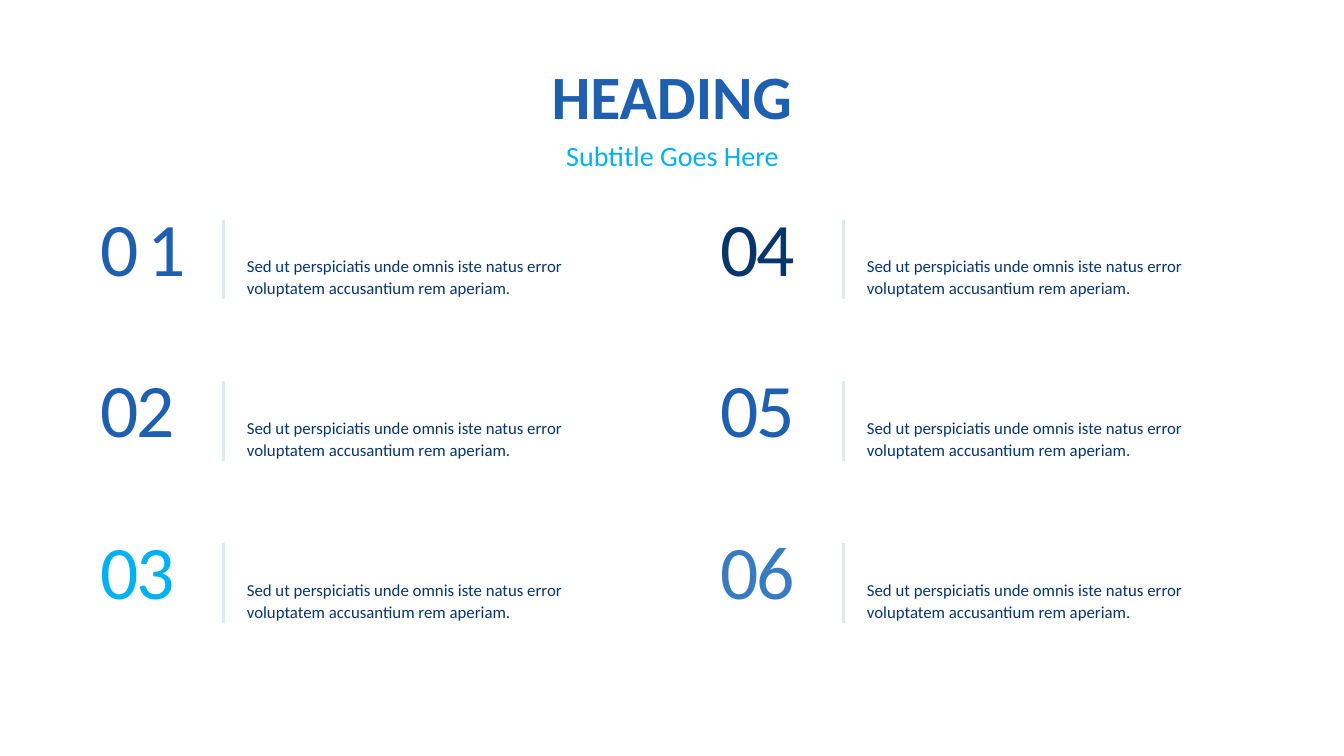
from dataclasses import dataclass

from lxml.etree import SubElement
from pptx import Presentation
from pptx.dml.color import RGBColor
from pptx.enum.shapes import MSO_CONNECTOR
from pptx.enum.text import MSO_AUTO_SIZE, PP_ALIGN
from pptx.oxml.ns import qn
from pptx.shapes.autoshape import Shape
from pptx.slide import Slide
from pptx.util import Inches, Pt


@dataclass(frozen=True)
class Theme:
    font: str = "Calibri"
    blue: str = "1E5FAF"
    navy: str = "08356B"
    cyan: str = "00B0F0"
    steel: str = "387CBF"
    rule: str = "E1E9EA"
    heading: float = 44
    subtitle: float = 20
    number: float = 54
    body: float = 12
    rule_width: float = 2


@dataclass(frozen=True)
class Item:
    number: str
    color: str
    width: float
    spacing: float = -1.5


THEME = Theme()
BODY = "Sed ut perspiciatis unde omnis iste natus error voluptatem accusantium rem aperiam."
ITEMS = [
    Item("01", THEME.blue, 1.19, spacing=6),
    Item("02", THEME.blue, 1.13),
    Item("03", THEME.cyan, 1.09),
    Item("04", THEME.navy, 1.14),
    Item("05", THEME.blue, 1.12),
    Item("06", THEME.steel, 1.15),
]
ROWS = 3
LEFT, TOP = 0.9, 1.99
COLUMN_PITCH = 6.15
ROW_PITCH = 3.21 / 2


def add_text(s: Slide, text: str, x: float, y: float, w: float, h: float,
             size: float, color: str, wrap: bool = False) -> Shape:
    sp = s.shapes.add_textbox(Inches(x), Inches(y), Inches(w), Inches(h))
    tf = sp.text_frame
    tf.text = text
    tf.word_wrap = wrap
    tf.auto_size = MSO_AUTO_SIZE.SHAPE_TO_FIT_TEXT
    font = tf.paragraphs[0].runs[0].font
    font.name = THEME.font
    font.size = Pt(size)
    font.color.rgb = RGBColor.from_string(color)
    return sp


def add_rule(s: Slide, x: float, y: float, h: float) -> None:
    line = s.shapes.add_connector(MSO_CONNECTOR.STRAIGHT, Inches(x), Inches(y),
                                  Inches(x), Inches(y + h))
    line.line.color.rgb = RGBColor.from_string(THEME.rule)
    line.line.width = Pt(THEME.rule_width)
    SubElement(line._element.spPr, qn("a:effectLst"))


def add_item(s: Slide, item: Item, x: float, y: float) -> None:
    """Draw a number, its text and the rule between them."""
    tf = add_text(s, item.number, x, y, item.width, 0.91,
                  THEME.number, item.color).text_frame
    tf.margin_top = tf.margin_bottom = 0
    r = tf.paragraphs[0].runs[0]
    r.font._element.set("spc", str(round(item.spacing * 100)))

    body = add_text(s, BODY, x + 1.45, y + 0.48, 3.62, 0.55,
                    THEME.body, THEME.navy, wrap=True)
    body.text_frame.paragraphs[0].line_spacing = 1.1
    add_rule(s, x + 1.32, y + 0.19, 0.79)


def main() -> None:
    prs = Presentation()
    prs.slide_width, prs.slide_height = Inches(13.33), Inches(7.5)
    s = prs.slides.add_slide(prs.slide_layouts[6])

    for i, item in enumerate(ITEMS):
        column, row = divmod(i, ROWS)
        add_item(s, item, LEFT + column * COLUMN_PITCH, TOP + row * ROW_PITCH)

    heading = add_text(s, "HEADING", 5.36, 0.53, 2.61, 0.84, THEME.heading, THEME.blue)
    heading.text_frame.paragraphs[0].runs[0].font.bold = True
    subtitle = add_text(s, "Subtitle Goes Here", 5.5, 1.32, 2.34, 0.44,
                        THEME.subtitle, THEME.cyan)
    for sp in (heading, subtitle):
        sp.text_frame.paragraphs[0].alignment = PP_ALIGN.CENTER

    prs.save("out.pptx")


if __name__ == "__main__":
    main()
